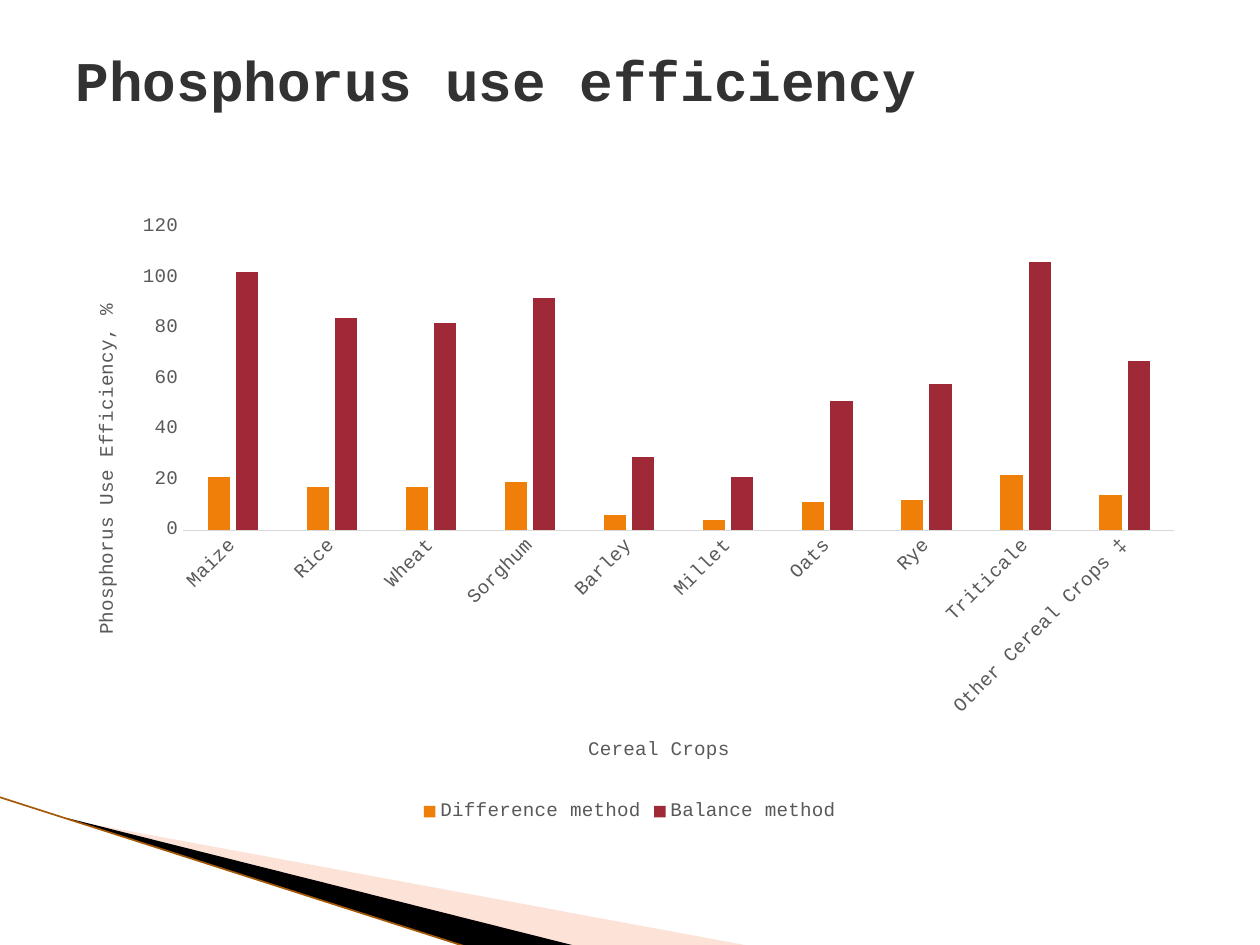
from typing import NamedTuple

from lxml.etree import SubElement
from pptx import Presentation
from pptx.chart.data import CategoryChartData
from pptx.dml.color import RGBColor
from pptx.enum.chart import XL_CHART_TYPE, XL_LEGEND_POSITION, XL_TICK_MARK
from pptx.enum.shapes import MSO_CONNECTOR
from pptx.enum.text import MSO_ANCHOR, PP_ALIGN
from pptx.oxml import parse_xml
from pptx.oxml.ns import nsdecls, qn
from pptx.util import Emu, Pt

EMU_PER_PX = 914400 / 126
FONT = "Courier New"
DARK = RGBColor(0x32, 0x32, 0x32)
GRAY = RGBColor(0x59, 0x59, 0x59)
AXIS_GRAY = RGBColor(0xD9, 0xD9, 0xD9)
ORANGE = RGBColor(0xF0, 0x7F, 0x09)
RED = RGBColor(0x9F, 0x29, 0x36)
PEACH = RGBColor(0xFC, 0xB7, 0x9B)
BLACK = RGBColor(0, 0, 0)
BROWN = RGBColor(0xA5, 0x58, 0x06)


class Wedge(NamedTuple):
    points: list[tuple[int, int]]
    color: RGBColor
    opacity: int = 100


class Method(NamedTuple):
    name: str
    color: RGBColor
    values: list[int]


WEDGES = [
    Wedge([(69, 820), (750, 946), (575, 946), (69, 819)], PEACH, 40),
    Wedge([(67, 818), (576, 946), (469, 948), (68, 819)], BLACK),
]
CROPS = ["Maize", "Rice", "Wheat", "Sorghum", "Barley", "Millet", "Oats", "Rye",
         "Triticale", "Other Cereal Crops ‡"]
METHODS = [
    Method("Difference method", ORANGE, [21, 17, 17, 19, 6, 4, 11, 12, 22, 14]),
    Method("Balance method", RED, [102, 84, 82, 92, 29, 21, 51, 58, 106, 67]),
]


def px(value: int) -> Emu:
    return Emu(round(value * EMU_PER_PX))


def style_font(font, size: int, color: RGBColor, bold: bool = False) -> None:
    font.name, font.size, font.bold = FONT, Pt(size), bold
    font.color.rgb = color


def draw_wedge(page, wedge: Wedge) -> None:
    builder = page.shapes.build_freeform(*wedge.points[0], scale=EMU_PER_PX)
    builder.add_line_segments(wedge.points[1:], close=True)
    shape = builder.convert_to_shape()
    shape.shadow.inherit = False
    shape.fill.solid()
    shape.fill.fore_color.rgb = wedge.color
    shape.line.fill.background()
    if wedge.opacity < 100:
        color = shape._element.spPr.find(".//" + qn("a:srgbClr"))
        SubElement(color, qn("a:alpha"), val=str(wedge.opacity * 1000))


def draw_edge(page) -> None:
    edge = page.shapes.add_connector(
        MSO_CONNECTOR.STRAIGHT, px(-1), px(797), px(467), px(947))
    edge.line.color.rgb = BROWN
    edge.line.width = Pt(0.95)
    SubElement(edge._element.spPr, qn("a:effectLst"))


def place(element, index: int, inner: bool = False, **fractions: float) -> None:
    """Give a chart part a manual layout in fractions of the chart's size."""
    old = element.find(qn("c:layout"))
    if old is not None:
        element.remove(old)
    target = '<c:layoutTarget val="inner"/>' if inner else ""
    modes = '<c:xMode val="edge"/><c:yMode val="edge"/>'
    numbers = "".join(f'<c:{key} val="{value}"/>' for key, value in fractions.items())
    element.insert(index, parse_xml(
        f'<c:layout {nsdecls("c")}><c:manualLayout>{target}{modes}{numbers}'
        "</c:manualLayout></c:layout>"))


def style_axis(axis, title: str, x: float, y: float) -> None:
    axis.has_major_gridlines = False
    axis.major_tick_mark = axis.minor_tick_mark = XL_TICK_MARK.NONE
    style_font(axis.tick_labels.font, 11, GRAY)
    frame = axis.axis_title.text_frame
    frame.text = title
    style_font(frame.paragraphs[0].runs[0].font, 11, GRAY)
    place(axis.axis_title._element, 1, x=x, y=y)


def draw_chart(page) -> None:
    data = CategoryChartData(number_format="0")
    data.categories = CROPS
    for method in METHODS:
        data.add_series(method.name, method.values)
    chart = page.shapes.add_chart(
        XL_CHART_TYPE.COLUMN_CLUSTERED, px(63), px(204), px(1134), px(624), data).chart
    style_font(chart.font, 10, BLACK)
    chart.has_title = False
    chart.has_legend = True
    chart.legend.position = XL_LEGEND_POSITION.BOTTOM
    chart.legend.include_in_layout = False
    style_font(chart.legend.font, 11, GRAY)

    plot = chart.plots[0]
    plot.vary_by_categories = False
    plot.gap_width, plot.overlap = 219, -27
    for series, method in zip(plot.series, METHODS):
        series.format.fill.solid()
        series.format.fill.fore_color.rgb = method.color
    plot_area = chart._chartSpace.find(".//" + qn("c:plotArea"))
    place(plot_area, 0, inner=True, x=0.106, y=0.037, w=0.874, h=0.486)

    crops, efficiency = chart.category_axis, chart.value_axis
    style_axis(crops, "Cereal Crops", 0.46, 0.85)
    crops.format.line.color.rgb = AXIS_GRAY
    crops.format.line.width = Pt(0.75)
    labels = crops._element.find(qn("c:txPr")).find(qn("a:bodyPr"))
    labels.set("rot", str(-45 * 60000))
    labels.set("vert", "horz")

    style_axis(efficiency, "Phosphorus Use Efficiency, %", 0.025, 0.155)
    turned = efficiency.axis_title.text_frame._txBody.find(qn("a:bodyPr"))
    turned.set("rot", str(-90 * 60000))
    turned.set("vert", "horz")
    efficiency.minimum_scale, efficiency.maximum_scale = 0, 120
    efficiency.major_unit = 20
    efficiency.format.line.fill.background()
    efficiency.tick_labels.number_format = "0"
    efficiency.tick_labels.number_format_is_linked = False


def write_title(page) -> None:
    title = page.shapes.title
    title.left, title.top, title.width, title.height = px(63), px(0), px(1134), px(158)
    title.text_frame.text = "Phosphorus use efficiency"
    title.text_frame.vertical_anchor = MSO_ANCHOR.MIDDLE
    paragraph = title.text_frame.paragraphs[0]
    paragraph.alignment = PP_ALIGN.LEFT
    style_font(paragraph.runs[0].font, 32, DARK, bold=True)


def main() -> None:
    deck = Presentation()
    deck.slide_width, deck.slide_height = px(1260), px(945)
    page = deck.slides.add_slide(deck.slide_layouts[5])
    for wedge in WEDGES:
        draw_wedge(page, wedge)
    draw_edge(page)
    draw_chart(page)
    write_title(page)
    deck.save("out.pptx")


if __name__ == "__main__":
    main()
